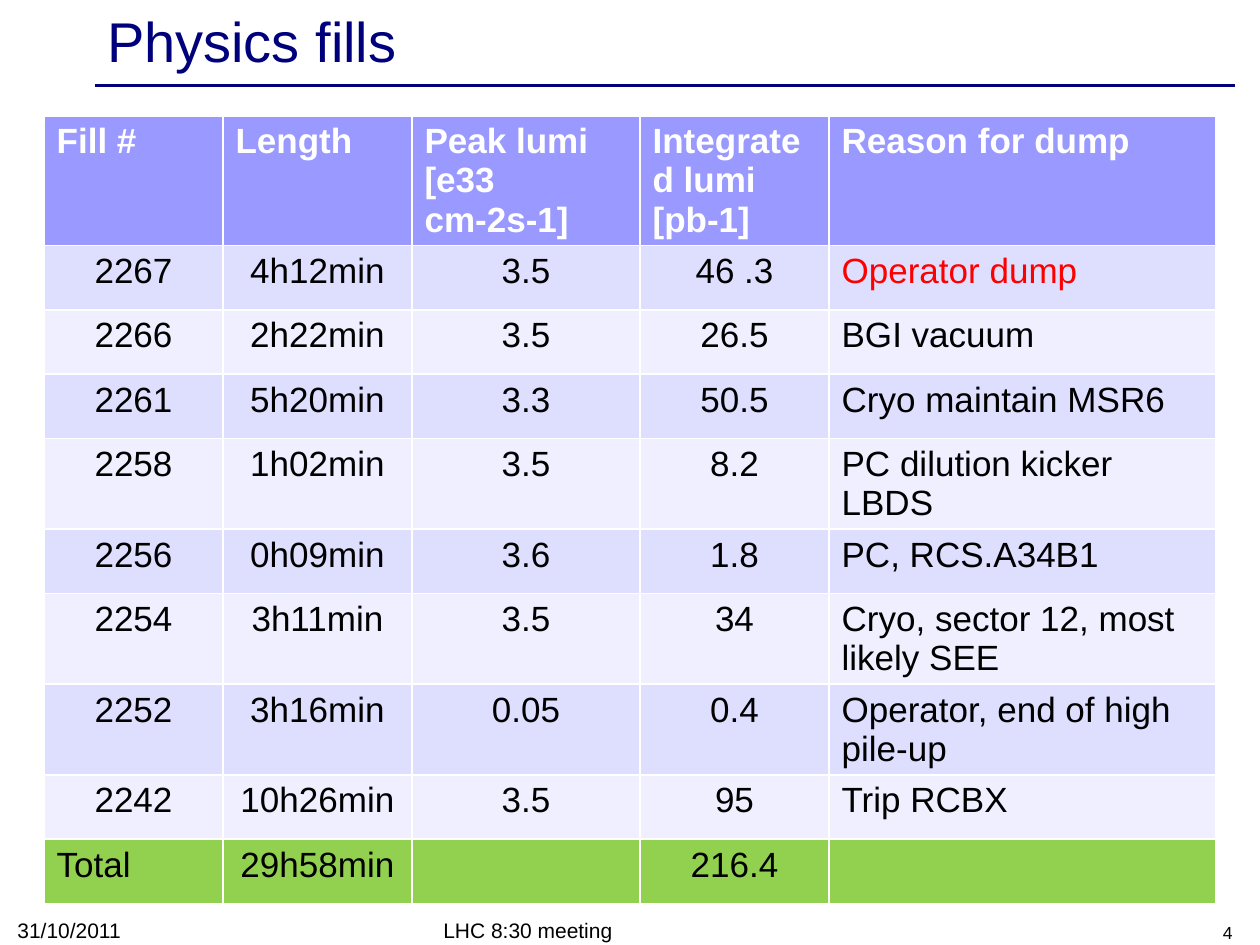
from pptx import Presentation
from pptx.dml.color import RGBColor
from pptx.enum.shapes import MSO_CONNECTOR as Connector
from pptx.enum.text import MSO_ANCHOR as Anchor, PP_ALIGN as Align
from pptx.oxml.ns import qn
from pptx.util import Inches, Pt
from lxml.etree import SubElement

FONT = "Arial"
NAVY, BLACK, WHITE, RED = "00007D", "000000", "FFFFFF", "FF0000"
HEADER_FILL, ODD_FILL, EVEN_FILL, TOTAL_FILL = "9999FF", "DEDEFF", "EFEFFF", "92D050"

COLUMN_WIDTHS = [1.42, 1.5, 1.81, 1.5, 3.07]
HEADER_HEIGHT, ROW_HEIGHT = 0.87, 0.51
HEADERS = ["Fill #", "Length", "Peak lumi\n[e33 cm-2s-1]",
           "Integrated lumi [pb-1]", "Reason for dump"]
FILLS = [
    ["2267", "4h12min", "3.5", "46 .3", "Operator dump"],
    ["2266", "2h22min", "3.5", "26.5", "BGI vacuum"],
    ["2261", "5h20min", "3.3", "50.5", "Cryo maintain MSR6"],
    ["2258", "1h02min", "3.5", "8.2", "PC dilution kicker LBDS"],
    ["2256", "0h09min", "3.6", "1.8", "PC, RCS.A34B1"],
    ["2254", "3h11min", "3.5", "34", "Cryo, sector 12, most likely SEE"],
    ["2252", "3h16min", "0.05", "0.4", "Operator, end of high pile-up"],
    ["2242", "10h26min", "3.5", "95", "Trip RCBX"],
]
TOTAL = ["Total", "29h58min", "", "216.4", ""]


def rgb(color):
    return RGBColor.from_string(color)


def write(frame, text, size, color, align=Align.LEFT, bold=False):
    frame.text = text
    for para in frame.paragraphs:
        para.alignment = align
        font = para.font
        font.name, font.size, font.bold = FONT, Pt(size), bold
        font.color.rgb = rgb(color)


def add_title(page, left, top, width, height):
    title = page.shapes.title
    title.left, title.top = Inches(left), Inches(top)
    title.width, title.height = Inches(width), Inches(height)
    write(title.text_frame, "Physics fills", 32, NAVY)
    title.text_frame.vertical_anchor = Anchor.MIDDLE

    # Rule under the title
    rule_y = Inches(top + height + 0.08)
    rule = page.shapes.add_connector(Connector.STRAIGHT, Inches(left), rule_y,
                                     Inches(left + width + 0.05), rule_y)
    rule.line.color.rgb = rgb(NAVY)
    rule.line.width = Pt(2)
    SubElement(rule._element.spPr, qn("a:effectLst"))


def add_fill_table(page, left, top):
    rows = [HEADERS, *FILLS, TOTAL]
    last = len(rows) - 1
    height = HEADER_HEIGHT + last * ROW_HEIGHT
    table = page.shapes.add_table(
        len(rows), len(COLUMN_WIDTHS), Inches(left), Inches(top),
        Inches(sum(COLUMN_WIDTHS)), Inches(height)).table
    for column, width in zip(table.columns, COLUMN_WIDTHS):
        column.width = Inches(width)

    for r, values in enumerate(rows):
        is_header, is_total = r == 0, r == last
        table.rows[r].height = Inches(HEADER_HEIGHT if is_header else ROW_HEIGHT)
        if is_header:
            fill = HEADER_FILL
        elif is_total:
            fill = TOTAL_FILL
        else:
            fill = ODD_FILL if r % 2 else EVEN_FILL

        for c, value in enumerate(values):
            cell = table.cell(r, c)
            cell.fill.solid()
            cell.fill.fore_color.rgb = rgb(fill)
            is_left = is_header or c == 4 or (is_total and c == 0)
            color = WHITE if is_header else RED if value == "Operator dump" else BLACK
            write(cell.text_frame, value, 20, color,
                  Align.LEFT if is_left else Align.CENTER, is_header)


def add_footer(page, top, height):
    parts = [
        ("31/10/2011", 0.04, 2.33, 12, Align.LEFT),
        ("LHC 8:30 meeting", 3.42, 3.17, 12, Align.LEFT),
        ("4", 7.55, 2.33, 10, Align.RIGHT),
    ]
    for text, left, width, size, align in parts:
        box = page.shapes.add_textbox(Inches(left), Inches(top),
                                      Inches(width), Inches(height))
        frame = box.text_frame
        frame.word_wrap = True
        frame.vertical_anchor = Anchor.BOTTOM
        write(frame, text, size, BLACK, align)


def main():
    deck = Presentation()
    deck.slide_width, deck.slide_height = Inches(10), Inches(7.5)
    page = deck.slides.add_slide(deck.slide_layouts[5])
    add_title(page, 0.75, 0.03, 9, 0.57)
    add_fill_table(page, 0.35, 0.92)
    add_footer(page, 7.25, 0.28)
    deck.save("out.pptx")


if __name__ == "__main__":
    main()
